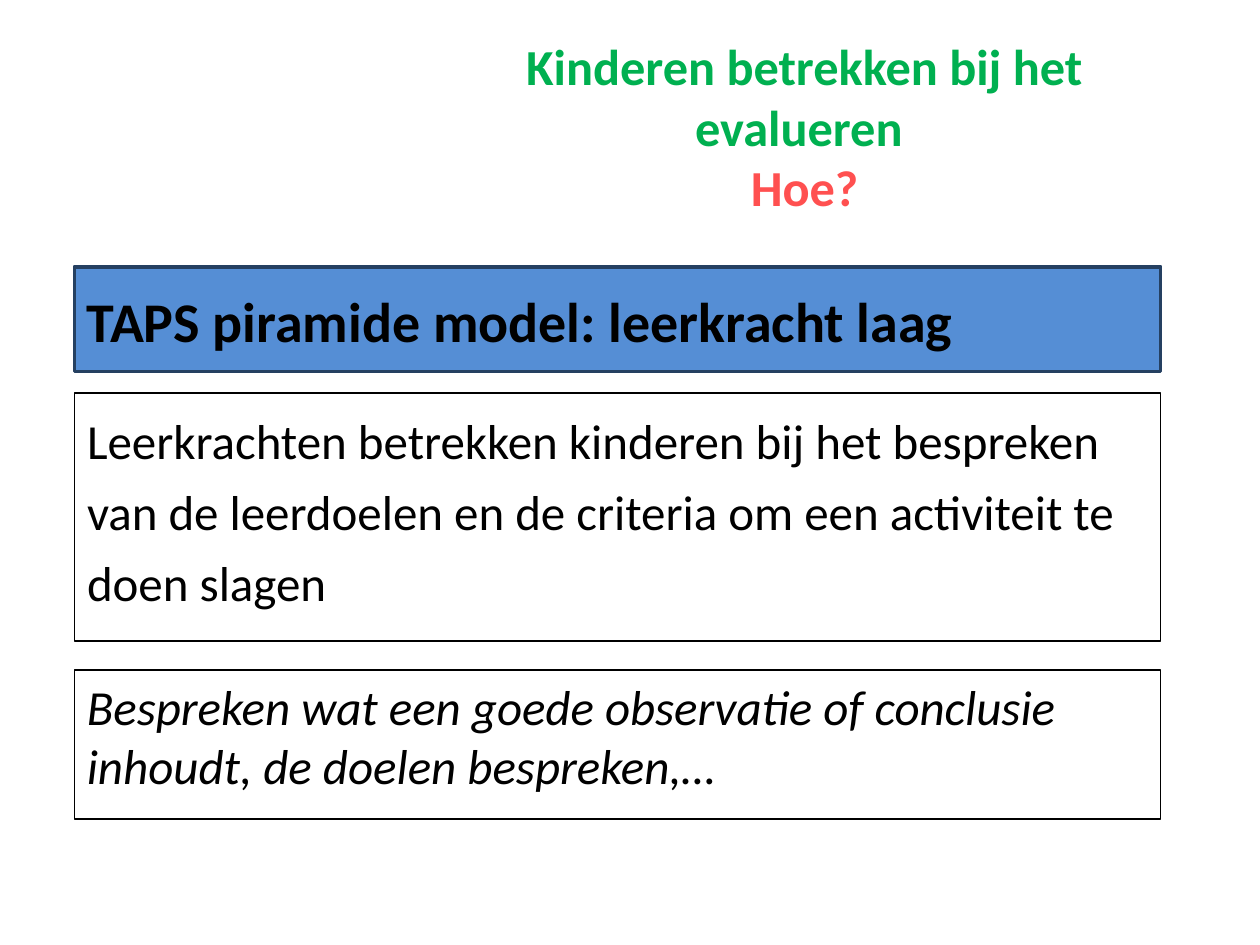
from lxml.etree import SubElement
from pptx import Presentation
from pptx.dml.color import RGBColor
from pptx.enum.shapes import MSO_SHAPE
from pptx.enum.text import MSO_ANCHOR, MSO_AUTO_SIZE, PP_ALIGN
from pptx.oxml.ns import qn
from pptx.util import Cm, Pt

GREEN = RGBColor(0x00, 0xB0, 0x50)
RED = RGBColor(0xFF, 0x50, 0x50)
BLUE = RGBColor(0x55, 0x8E, 0xD5)
NAVY = RGBColor(0x25, 0x40, 0x61)
BLACK = RGBColor(0x00, 0x00, 0x00)

TITLE_LINES = [("Kinderen betrekken bij het evalueren ", GREEN), ("Hoe?", RED)]
TITLE_AREA = (8.31, 0.76, 15.82, 3.56)
BOX_LEFT, BOX_WIDTH = 1.5, 21.9
BOXES = [
    {"text": "Leerkrachten betrekken kinderen bij het bespreken van de leerdoelen "
             "en de criteria om een activiteit te doen slagen",
     "placeholder": True, "top": 7.92, "height": 5, "fill": None,
     "line": (BLACK, 0.75), "spacing": 1.2, "font": {"size": Pt(28)}},
    {"text": "TAPS piramide model: leerkracht laag",
     "placeholder": False, "top": 5.38, "height": 2.11, "fill": BLUE,
     "line": (NAVY, 2), "spacing": 1.2, "font": {"size": Pt(32), "bold": True}},
    {"text": "Bespreken wat een goede observatie of conclusie inhoudt, "
             "de doelen bespreken,…",
     "placeholder": False, "top": 13.51, "height": 3, "fill": None,
     "line": (BLACK, 0.75), "spacing": 1, "font": {"size": Pt(28), "italic": True}},
]


def set_values(target, values):
    for name, value in values.items():
        setattr(target, name, value)


def place(shape, left, top, width, height):
    set_values(shape, {"left": Cm(left), "top": Cm(top),
                       "width": Cm(width), "height": Cm(height)})


def set_frame(shape, anchor):
    set_values(shape.text_frame, {"word_wrap": True, "vertical_anchor": anchor,
                                  "auto_size": MSO_AUTO_SIZE.NONE})


def write_run(paragraph, text, color, font):
    run = paragraph.add_run()
    run.text = text
    set_values(run.font, {"name": "Calibri", **font})
    run.font.color.rgb = color


def fill_title(title):
    place(title, *TITLE_AREA)
    set_frame(title, MSO_ANCHOR.MIDDLE)
    paragraph = title.text_frame.paragraphs[0]
    paragraph.alignment = PP_ALIGN.CENTER
    for index, (text, color) in enumerate(TITLE_LINES):
        if index:
            paragraph.add_line_break()
        write_run(paragraph, text, color, {"size": Pt(28.8), "bold": True})


def add_box(slide, box):
    if box["placeholder"]:
        shape = slide.placeholders[1]
    else:
        shape = slide.shapes.add_shape(MSO_SHAPE.RECTANGLE, 0, 0, 0, 0)
        shape.shadow.inherit = False
    place(shape, BOX_LEFT, box["top"], BOX_WIDTH, box["height"])
    if box["fill"] is None:
        shape.fill.background()
    else:
        shape.fill.solid()
        shape.fill.fore_color.rgb = box["fill"]
    color, width = box["line"]
    shape.line.color.rgb = color
    shape.line.width = Pt(width)
    set_frame(shape, MSO_ANCHOR.TOP)
    paragraph = shape.text_frame.paragraphs[0]
    set_values(paragraph, {"alignment": PP_ALIGN.LEFT, "space_before": Pt(0),
                           "line_spacing": box["spacing"]})
    if box["placeholder"]:
        properties = paragraph._p.get_or_add_pPr()
        properties.set("marL", "0")
        properties.set("indent", "0")
        SubElement(properties, qn("a:buNone"))
    write_run(paragraph, box["text"], BLACK, box["font"])


def main():
    presentation = Presentation()
    set_values(presentation, {"slide_width": Cm(25.4), "slide_height": Cm(19.05)})
    slide = presentation.slides.add_slide(presentation.slide_layouts[1])
    fill_title(slide.shapes.title)
    for box in BOXES:
        add_box(slide, box)
    presentation.save("out.pptx")


if __name__ == "__main__":
    main()
